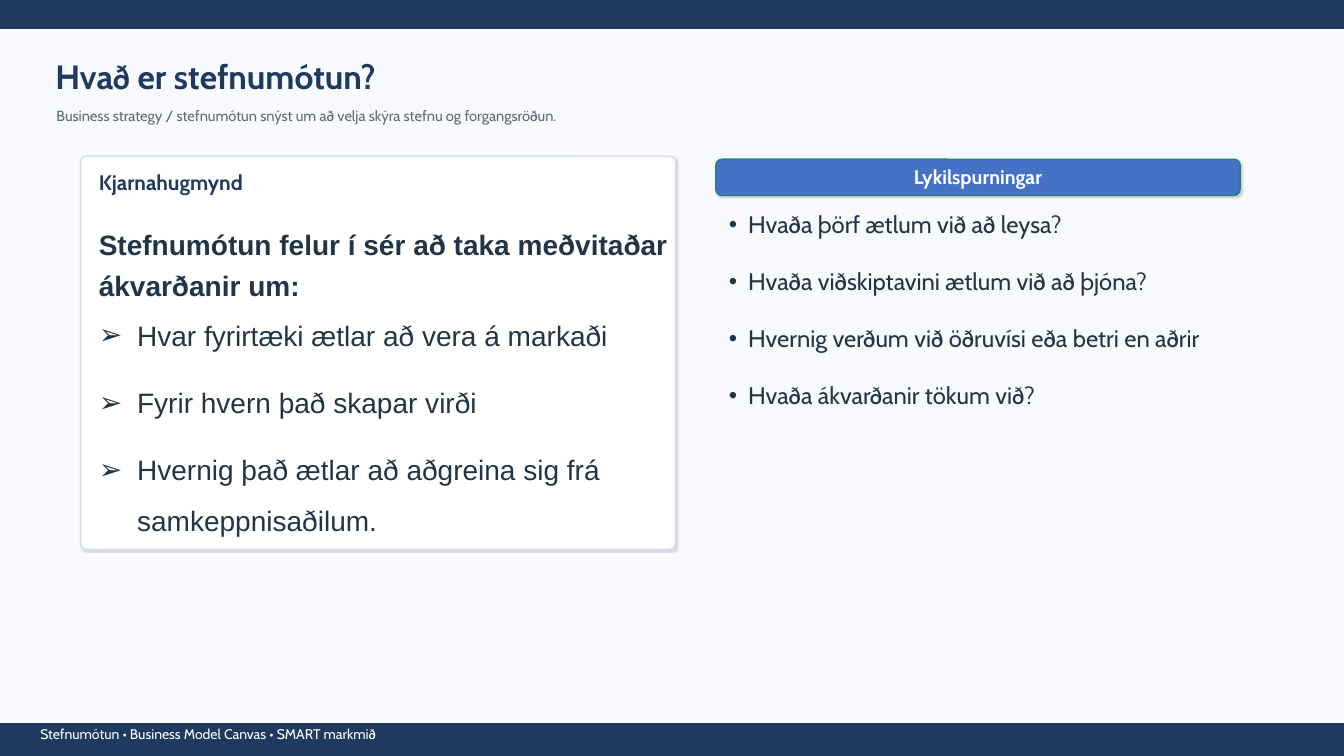
from lxml.etree import SubElement
from pptx import Presentation
from pptx.dml.color import RGBColor
from pptx.enum.shapes import MSO_SHAPE
from pptx.enum.text import MSO_ANCHOR, PP_ALIGN
from pptx.oxml.ns import qn
from pptx.util import Inches, Pt

THEME = {
    "bg": "F7F9FC", "navy": "1F3A5F", "white": "FFFFFF", "muted": "5C6B7A",
    "ink": "213547", "card_line": "D7E0EA", "blue": "4472C4", "teal": "1E847F",
    "head": "Cabin", "body": "Arial",
    "title": 24, "lead": 20, "question": 17, "card": 15, "label": 14,
    "subtitle": 10.5, "footer": 10,
}

prs = Presentation()
prs.slide_width, prs.slide_height = Inches(13.33), Inches(7.5)
COL, ROW = prs.slide_width / 133.3, prs.slide_height / 75
s = prs.slides.add_slide(prs.slide_layouts[6])
s.background.fill.solid()
s.background.fill.fore_color.rgb = RGBColor.from_string(THEME["bg"])


def add_panel(cell, fill, line, radius=0, shadow=0):
    x, y, w, h = cell
    kind = MSO_SHAPE.ROUNDED_RECTANGLE if radius else MSO_SHAPE.RECTANGLE
    sp = s.shapes.add_shape(kind, int(x * COL), int(y * ROW), int(w * COL), int(h * ROW))
    sp.fill.solid()
    sp.fill.fore_color.rgb = RGBColor.from_string(THEME[fill])
    sp.line.color.rgb = RGBColor.from_string(THEME[line])
    sp.line.width = Pt(1)
    sp.shadow.inherit = False
    if radius:
        sp.adjustments[0] = radius
    if shadow:
        effects = sp._element.spPr.find(qn("a:effectLst"))
        outer = SubElement(effects, qn("a:outerShdw"), blurRad=str(Pt(1)), dist=str(Pt(1)),
                           dir="2700000", algn="bl", rotWithShape="0")
        black = SubElement(outer, qn("a:srgbClr"), val="000000")
        SubElement(black, qn("a:alpha"), val=str(shadow * 1000))


def add_text(cell, lines, size, color, font="head", bold=False, align=PP_ALIGN.LEFT,
             anchor=MSO_ANCHOR.MIDDLE, inset=0, bullet=None, indent=0, spacing=None, after=0):
    x, y, w, h = cell
    sp = s.shapes.add_textbox(int(x * COL), int(y * ROW), int(w * COL), int(h * ROW))
    tf = sp.text_frame
    tf.word_wrap = True
    tf.vertical_anchor = anchor
    tf.margin_left = tf.margin_right = tf.margin_top = tf.margin_bottom = Inches(inset)
    for i, text in enumerate(lines):
        p = tf.paragraphs[0] if i == 0 else tf.add_paragraph()
        if bullet:
            pPr = p._p.get_or_add_pPr()
            pPr.set("marL", str(Inches(indent)))
            pPr.set("indent", str(-Inches(indent)))
            SubElement(pPr, qn("a:buFont"), typeface="Arial")
            SubElement(pPr, qn("a:buChar"), char=bullet)
        p.alignment = align
        p.line_spacing = spacing
        p.space_after = Pt(after)
        r = p.add_run()
        r.text = text
        r.font.name = THEME[font]
        r.font.size = Pt(THEME[size])
        r.font.bold = bold
        r.font.color.rgb = RGBColor.from_string(THEME[color])
    return tf


for top, height in ((0, 2.8), (71.8, 3.2)):
    add_panel((0, top, 133.3, height), "navy", "navy")
add_text((4, 72, 85, 1.6), ["Stefnumótun • Business Model Canvas • SMART markmið"], "footer", "white")

add_text((5.5, 5, 88, 5), ["Hvað er stefnumótun?"], "title", "navy", bold=True)
add_text((5.6, 10, 108, 3),
         ["Business strategy / stefnumótun snýst um að velja skýra stefnu og forgangsröðun."],
         "subtitle", "muted")

add_panel((8, 15.5, 59, 39), "white", "card_line", radius=0.015, shadow=12)
add_text((9.8, 16.9, 55.4, 2.4), ["Kjarnahugmynd"], "card", "navy", bold=True)
tf = add_text((9.8, 20.9, 61.4, 33.4), [
    "Stefnumótun felur í sér að taka meðvitaðar ákvarðanir um:",
    "Hvar fyrirtæki ætlar að vera á markaði",
    "Fyrir hvern það skapar virði",
    "Hvernig það ætlar að aðgreina sig frá samkeppnisaðilum.",
], "lead", "ink", font="body", bullet="➢", indent=0.38, spacing=1.5, after=12)
p = tf.paragraphs[0]
pPr = p._p.get_or_add_pPr()
pPr.set("marL", "0")
pPr.set("indent", "0")
pPr.remove(pPr.find(qn("a:buFont")))
pPr.remove(pPr.find(qn("a:buChar")))
p.line_spacing, p.space_after = 1.2, Pt(0)
p.runs[0].font.bold = True

add_panel((71, 15.8, 52, 3.6), "blue", "teal", radius=0.167, shadow=16)
add_text((72.8, 16.6, 48.4, 1.8), ["Lykilspurningar"], "label", "white", bold=True,
         align=PP_ALIGN.CENTER)
add_text((72, 20.5, 50, 32), [
    "Hvaða þörf ætlum við að leysa?",
    "Hvaða viðskiptavini ætlum við að þjóna?",
    "Hvernig verðum við öðruvísi eða betri en aðrir",
    "Hvaða ákvarðanir tökum við?",
], "question", "ink", anchor=MSO_ANCHOR.TOP, inset=0.03, bullet="•", indent=0.19, after=20.4)

prs.save("out.pptx")
